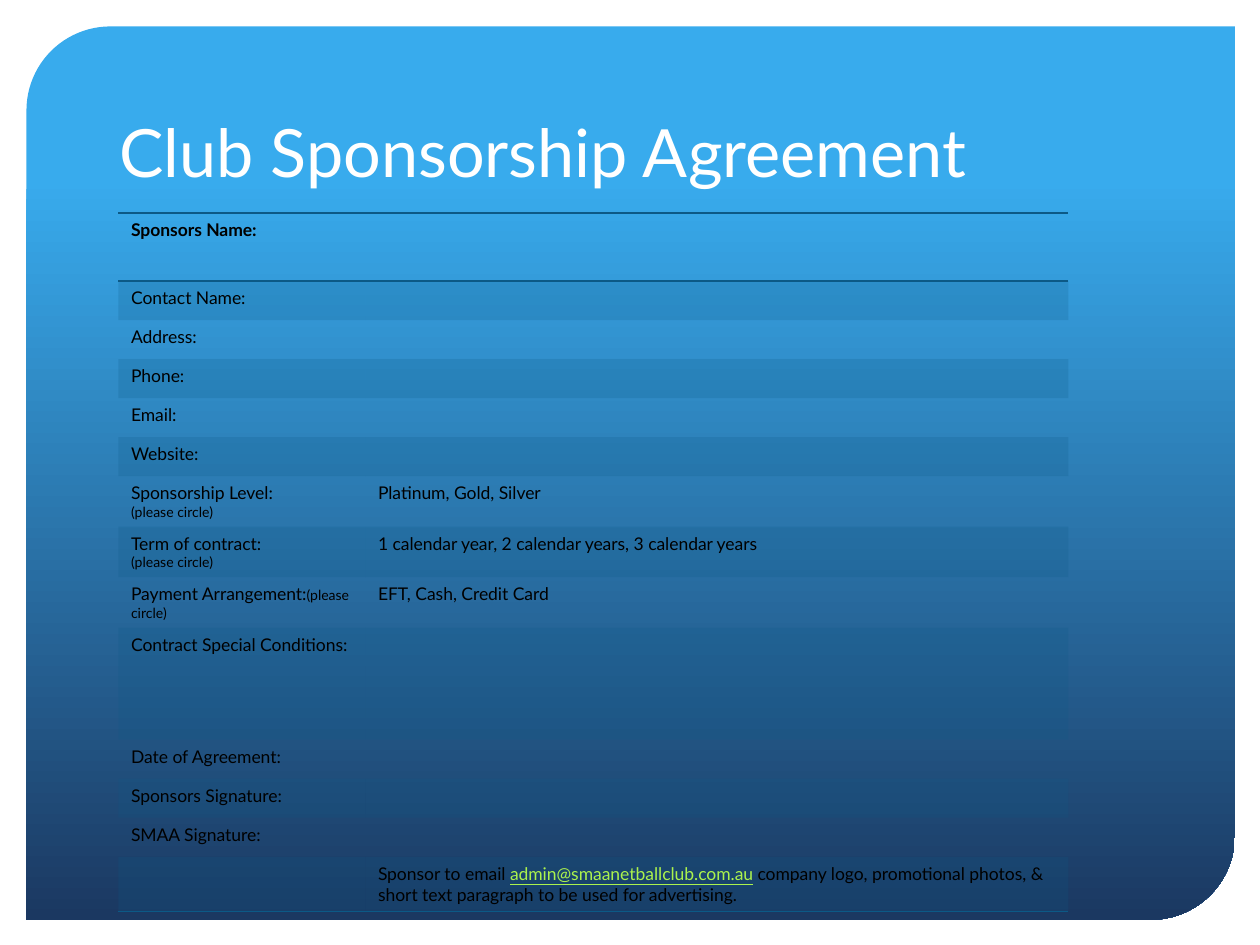
from typing import NamedTuple

from lxml.etree import SubElement
from pptx import Presentation
from pptx.dml.color import RGBColor
from pptx.enum.shapes import MSO_SHAPE
from pptx.enum.text import MSO_ANCHOR
from pptx.oxml import parse_xml
from pptx.oxml.ns import nsdecls, qn
from pptx.util import Inches, Pt

FONT = "Lato"
BLACK, WHITE, GREEN, BAND = "000000", "FFFFFF", "ABF24D", "0C5986"
GRADIENT = ((0.17, "38ABED"), (1, "1B3861"))
NO_STYLE = "{2D5ABB26-0587-4C30-8999-92F81FD0307C}"
TEXT_SIZE, NOTE_SIZE = 10, 8
COLUMN_WIDTHS = (1.96, 5.58)
ROW_HEIGHT = 0.31


class Span(NamedTuple):
    text: str
    size: float = TEXT_SIZE
    color: str = BLACK
    underline: bool = False


class Row(NamedTuple):
    """A form row; each cell is a list of paragraphs made of spans."""
    label: list[list[Span]]
    answer: list[list[Span]] = [[]]
    height: float = ROW_HEIGHT


def line(text: str) -> list[Span]:
    return [Span(text)]


CIRCLE = Span("(please circle)", NOTE_SIZE)
ROWS = [
    Row([line("Sponsors Name:")], height=0.54),
    *(Row([line(f"{name}:")])
      for name in ("Contact Name", "Address", "Phone", "Email", "Website")),
    Row([line("Sponsorship Level:"), [CIRCLE]], [line("Platinum, Gold, Silver")]),
    Row([line("Term of contract:"), [CIRCLE]],
        [line("1 calendar year, 2 calendar years, 3 calendar years")]),
    Row([[Span("Payment Arrangement:"), CIRCLE]], [line("EFT, Cash, Credit Card")]),
    Row([line("Contract Special Conditions:")], height=0.89),
    *(Row([line(f"{name}:")])
      for name in ("Date of Agreement", "Sponsors Signature", "SMAA Signature")),
    Row([[]], [[Span("Sponsor to email "),
                Span("admin@smaanetballclub.com.au", color=GREEN, underline=True),
                Span(" company logo, promotional photos, & short text paragraph"
                     " to be used for advertising.")]]),
]


def rgb(value: str) -> RGBColor:
    return RGBColor.from_string(value)


def style_font(font, size: float, color: str) -> None:
    font.name = FONT
    font.size = Pt(size)
    font.color.rgb = rgb(color)


def add_panel(slide) -> None:
    panel = slide.shapes.add_shape(MSO_SHAPE.ROUND_2_DIAG_RECTANGLE, Inches(0.21),
                                   Inches(0.21), Inches(9.59), Inches(7.09))
    panel.shadow.inherit = False
    panel.adjustments[0], panel.adjustments[1] = 0.094, 0
    panel.line.fill.background()
    panel.fill.gradient()
    panel.fill.gradient_angle = 270
    for stop, (position, color) in zip(panel.fill.gradient_stops, GRADIENT):
        stop.position = position
        stop.color.rgb = rgb(color)


def add_title(slide, text: str) -> None:
    title = slide.shapes.add_textbox(Inches(0.85), Inches(0.42), Inches(8.29), Inches(1.14))
    frame = title.text_frame
    frame.word_wrap = True
    frame.vertical_anchor = MSO_ANCHOR.BOTTOM
    frame.text = text
    style_font(frame.paragraphs[0].font, 38, WHITE)


def write_cell(cell, paragraphs: list[list[Span]], bold: bool) -> None:
    frame = cell.text_frame
    for index, spans in enumerate(paragraphs):
        paragraph = frame.add_paragraph() if index else frame.paragraphs[0]
        base = spans[0] if spans else Span("")
        style_font(paragraph.font, base.size, base.color)
        paragraph.font.bold = bold
        for span in spans:
            run = paragraph.add_run()
            run.text = span.text
            if span.size != base.size:
                run.font.size = Pt(span.size)
            if span.color != base.color:
                run.font.color.rgb = rgb(span.color)
            if span.underline:
                run.font.underline = True
        if not spans:
            end = SubElement(paragraph._p, qn("a:endParaRPr"))
            end.set("sz", str(TEXT_SIZE * 100))


def fill_cell(cell, banded: bool) -> None:
    """Tint a banded cell at 20 % opacity and leave the others clear."""
    if not banded:
        cell.fill.background()
        return
    cell.fill.solid()
    cell.fill.fore_color.rgb = rgb(BAND)
    color = cell._tc.tcPr.find(f".//{qn('a:srgbClr')}")
    SubElement(color, qn("a:alpha")).set("val", "20000")


def add_borders(cell, sides: str) -> None:
    """Rule the sides named by T and B, in that order."""
    for index, side in enumerate(sides):
        border = parse_xml(
            f'<a:ln{side} {nsdecls("a")} w="{Pt(1)}"><a:solidFill>'
            f'<a:srgbClr val="{BAND}"/></a:solidFill></a:ln{side}>')
        cell._tc.get_or_add_tcPr().insert(index, border)


def add_form(slide, rows: list[Row]) -> None:
    frame = slide.shapes.add_table(
        len(rows), len(COLUMN_WIDTHS), Inches(0.94), Inches(1.69),
        Inches(sum(COLUMN_WIDTHS)), Inches(sum(row.height for row in rows)))
    table = frame.table
    table.first_row = table.horz_banding = False
    table._tbl.tblPr.find(qn("a:tableStyleId")).text = NO_STYLE
    for column, width in zip(table.columns, COLUMN_WIDTHS):
        column.width = Inches(width)
    borders = {0: "TB", len(rows) - 1: "B"}
    for index, row in enumerate(rows):
        table.rows[index].height = Inches(row.height)
        for cell, content in zip(table.rows[index].cells, (row.label, row.answer)):
            write_cell(cell, content, bold=index == 0)
            fill_cell(cell, banded=index % 2 == 1)
            add_borders(cell, borders.get(index, ""))


def main() -> None:
    presentation = Presentation()
    presentation.slide_width, presentation.slide_height = Inches(10), Inches(7.5)
    slide = presentation.slides.add_slide(presentation.slide_layouts[6])
    add_panel(slide)
    add_title(slide, "Club Sponsorship Agreement")
    add_form(slide, ROWS)
    presentation.save("out.pptx")


if __name__ == "__main__":
    main()
